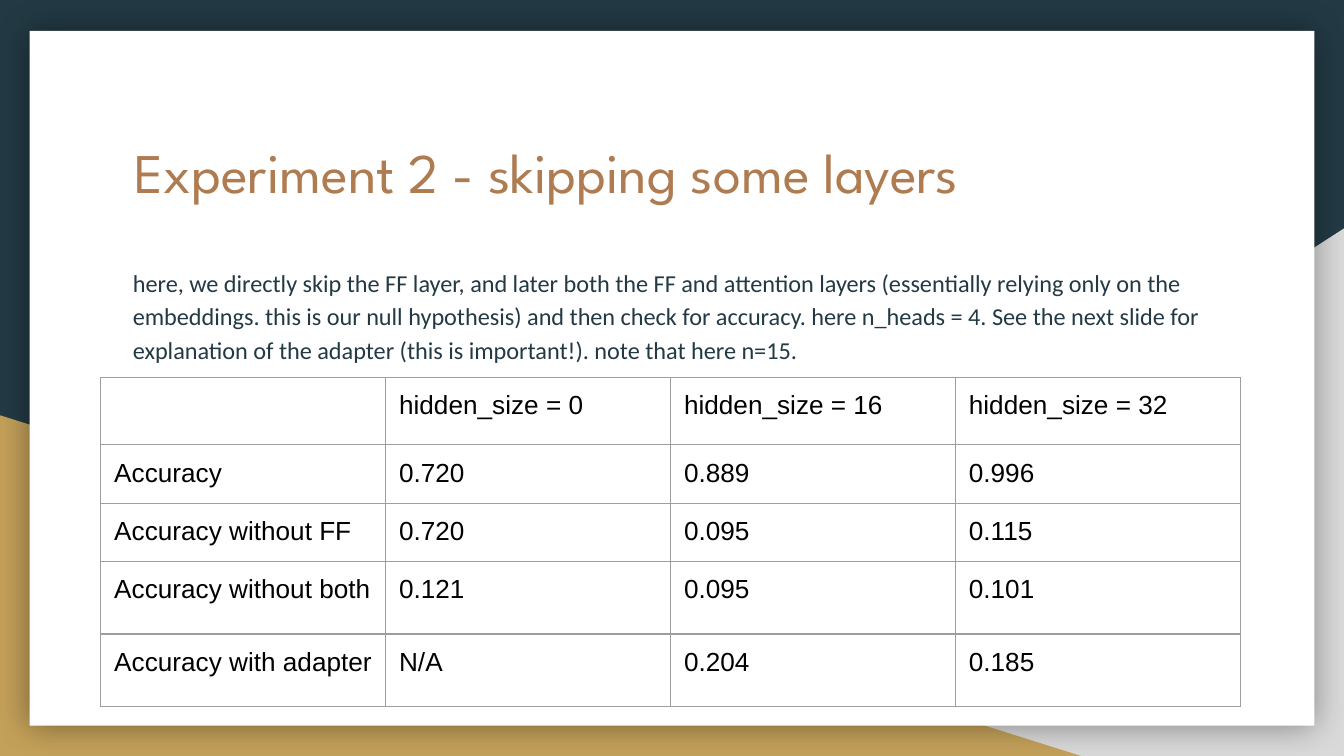
from dataclasses import dataclass

from lxml.etree import SubElement
from pptx import Presentation
from pptx.dml.color import RGBColor
from pptx.enum.shapes import MSO_SHAPE
from pptx.enum.text import MSO_ANCHOR
from pptx.oxml.ns import qn
from pptx.util import Inches, Pt

NAVY, GOLD, GREY, WHITE = "233A44", "C4A15A", "D9D9D9", "FFFFFF"
COPPER, BLACK, BORDER = "AF7B51", "000000", "9E9E9E"
INSET = Inches(0.1)


@dataclass
class Box:
    left: float
    top: float
    width: float
    height: float

    def lengths(self) -> tuple:
        return tuple(Inches(v) for v in (self.left, self.top, self.width, self.height))


@dataclass
class Style:
    font: str
    size: float
    color: str
    spacing: float | None = None


TITLE = Style("League Spartan", 30, COPPER)
BODY = Style("Calibri", 13, NAVY, 1.15)
CELL = Style("Arial", 14, BLACK)

ROWS = [
    ("", "hidden_size = 0", "hidden_size = 16", "hidden_size = 32"),
    ("Accuracy", "0.720", "0.889", "0.996"),
    ("Accuracy without FF", "0.720", "0.095", "0.115"),
    ("Accuracy without both", "0.121", "0.095", "0.101"),
    ("Accuracy with adapter", "N/A", "0.204", "0.185"),
]
ROW_HEIGHTS = [0.4, 0.4, 0.4, 0.54, 0.54]
COLUMN_WIDTH = 2.12


def rgb(color: str) -> RGBColor:
    return RGBColor.from_string(color)


def add_block(s, kind, box: Box, color: str):
    sp = s.shapes.add_shape(kind, *box.lengths())
    sp.shadow.inherit = False
    sp.fill.solid()
    sp.fill.fore_color.rgb = rgb(color)
    sp.line.fill.background()
    return sp


def add_glow_shadow(sp, blur: float, opacity: int) -> None:
    """Put an even shadow on all sides; blur in points, opacity in percent."""
    effects = sp._element.spPr.find(qn("a:effectLst"))
    shadow = SubElement(effects, qn("a:outerShdw"), blurRad=str(Pt(blur)),
                        dist="0", dir="0", algn="ctr", rotWithShape="0")
    color = SubElement(shadow, qn("a:srgbClr"), val=BLACK)
    SubElement(color, qn("a:alpha"), val=str(opacity * 1000))


def write(tf, text: str, style: Style) -> None:
    p = tf.paragraphs[0]
    p.line_spacing = style.spacing
    r = p.add_run()
    r.text = text
    r.font.name = style.font
    r.font.size = Pt(style.size)
    r.font.color.rgb = rgb(style.color)


def add_text(s, box: Box, text: str, style: Style) -> None:
    tf = s.shapes.add_textbox(*box.lengths()).text_frame
    tf.word_wrap = True
    tf.vertical_anchor = MSO_ANCHOR.TOP
    tf.margin_left = tf.margin_right = tf.margin_top = tf.margin_bottom = INSET
    write(tf, text, style)


def add_borders(cell) -> None:
    tc_pr = cell._tc.get_or_add_tcPr()
    for i, side in enumerate(("lnL", "lnR", "lnT", "lnB")):
        ln = tc_pr.makeelement(qn(f"a:{side}"), {"w": str(Pt(0.75))})
        fill = SubElement(ln, qn("a:solidFill"))
        SubElement(fill, qn("a:srgbClr"), val=BORDER)
        tc_pr.insert(i, ln)


def add_results(s, left: float, top: float) -> None:
    columns = len(ROWS[0])
    box = Box(left, top, COLUMN_WIDTH * columns, sum(ROW_HEIGHTS))
    table = s.shapes.add_table(len(ROWS), columns, *box.lengths()).table
    table.first_row = table.horz_banding = False
    for column in table.columns:
        column.width = Inches(COLUMN_WIDTH)
    for i, (texts, height) in enumerate(zip(ROWS, ROW_HEIGHTS)):
        table.rows[i].height = Inches(height)
        for j, text in enumerate(texts):
            cell = table.cell(i, j)
            cell.margin_left = cell.margin_right = INSET
            cell.margin_top = cell.margin_bottom = INSET
            cell.fill.background()
            add_borders(cell)
            if text:
                write(cell.text_frame, text, CELL)


def main() -> None:
    prs = Presentation()
    prs.slide_width = Inches(10)
    prs.slide_height = prs.slide_width * 9 // 16
    s = prs.slides.add_slide(prs.slide_layouts[6])
    s.background.fill.solid()
    s.background.fill.fore_color.rgb = rgb(NAVY)

    right = add_block(s, MSO_SHAPE.RIGHT_TRIANGLE, Box(3.92, 1.7, 6.08, 3.93), GREY)
    right._element.spPr.get_or_add_xfrm().set("flipH", "1")
    add_block(s, MSO_SHAPE.RIGHT_TRIANGLE, Box(0, 3.09, 8.06, 2.54), GOLD)
    card = add_block(s, MSO_SHAPE.RECTANGLE, Box(0.22, 0.23, 9.56, 5.17), WHITE)
    add_glow_shadow(card, blur=18, opacity=40)

    add_text(s, Box(0.9, 0.92, 8.21, 1.04), "Experiment 2 - skipping some layers", TITLE)
    add_text(s, Box(0.89, 1.86, 8.21, 2.68),
             "here, we directly skip the FF layer, and later both the FF and attention "
             "layers (essentially relying only on the embeddings. this is our null "
             "hypothesis) and then check for accuracy. here n_heads = 4. See the next "
             "slide for explanation of the adapter (this is important!). note that "
             "here n=15.", BODY)
    add_results(s, 0.75, 2.81)
    prs.save("out.pptx")


if __name__ == "__main__":
    main()
